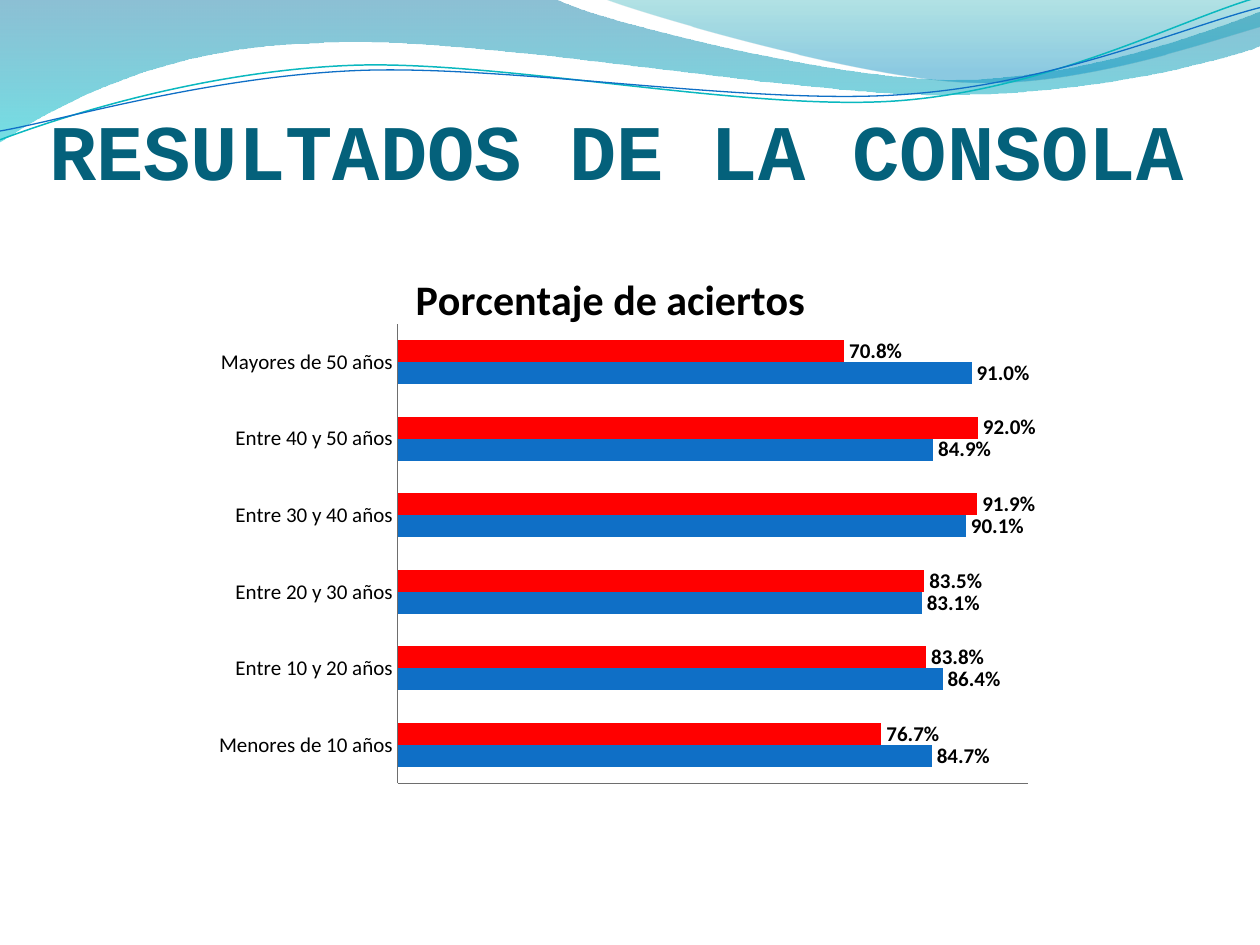
import math
import pptx
import pptx.chart.data
import pptx.dml.color
import pptx.enum.chart
import pptx.enum.text
import pptx.oxml
import pptx.oxml.ns
import pptx.util
from dataclasses import dataclass
from lxml import etree

Inches, Pt = pptx.util.Inches, pptx.util.Pt
qn = pptx.oxml.ns.qn


@dataclass(frozen=True)
class Theme:
    title: str = "04617B"
    text: str = "000000"
    axis: str = "6E6E6E"
    blue: str = "0F6FC6"
    red: str = "FF0000"
    teal: str = "0AB8BF"
    title_font: str = "Courier New"
    chart_font: str = "Calibri"
    title_size: int = 45
    chart_title_size: int = 24
    label_size: int = 12


THEME = Theme()
LINE_TILT = 357.3

# Each path is a start point, then line ends (x, y) or cubic curves (two controls and an end)
BACK_WAVE = [(0, 0), (4.4, -0.01), (4.76, 0.17, 6.64, 0.63, 7.58, 0.63),
             (8.53, 0.63, 9.58, 0.26, 10, 0.09), (10.01, 0.36),
             (9.83, 0.44, 8.7, 0.76, 7.46, 0.75), (6.22, 0.75, 3.82, 0.28, 2.57, 0.34),
             (1.29, 0.36, 0.46, 0.83, -0.01, 1.13), (0, 0)]
FRONT_WAVE = [(4.79, -0.01), (5.09, 0.11, 6.82, 0.62, 7.69, 0.65),
              (8.56, 0.69, 9.61, 0.32, 10, 0.21), (10, 0), (4.79, -0.01)]
TEAL_LINE = [(0, 1.11), (0.48, 0.93, 1.58, 0.57, 2.77, 0.52),
             (3.95, 0.47, 5.93, 0.89, 7.13, 0.8), (8.33, 0.71, 9.38, 0.15, 9.98, -0.02)]
BLUE_LINE = [(0, 1.04), (0.47, 0.96, 1.64, 0.61, 2.83, 0.56),
             (4.03, 0.51, 5.97, 0.84, 7.17, 0.75), (8.36, 0.67, 9.41, 0.21, 10, 0.06)]

# Gradient stops: position, colour, opacity in percent
BACK_STOPS = [(0, "0074A1", 45), (1, "00C6CF", 55)]
FRONT_STOPS = [(0, "00A1A9", 30), (0.8, "008BBF", 45)]

CATEGORIES = ["Menores de 10 años", "Entre 10 y 20 años", "Entre 20 y 30 años",
              "Entre 30 y 40 años", "Entre 40 y 50 años", "Mayores de 50 años"]
SERIES = [("Series 1", THEME.blue, [0.847, 0.864, 0.831, 0.901, 0.849, 0.91]),
          ("Series 2", THEME.red, [0.767, 0.838, 0.835, 0.919, 0.92, 0.708])]


def rgb(value):
    return pptx.dml.color.RGBColor.from_string(value)


def style_font(font, name, size, color, bold):
    font.name, font.size, font.bold = name, Pt(size), bold
    font.color.rgb = rgb(color)


def add_path(s, box, path, close, rotation=0):
    """Outline of lines and cubic curves in a box (left, top, width, height)."""
    left, top, width, height = box
    builder = s.shapes.build_freeform(Inches(left), Inches(top))
    builder.add_line_segments([(Inches(left + width), Inches(top + height))], close=False)
    sp = builder.convert_to_shape()
    sp.shadow.inherit = False
    sp.rotation = rotation

    # Points are given as seen on the slide, so the turn of the box is taken back
    cos, sin = math.cos(math.radians(-rotation)), math.sin(math.radians(-rotation))
    outline = next(sp.element.spPr.iter(qn("a:path")))
    for old in list(outline):
        outline.remove(old)
    for i, part in enumerate(path):
        tag = "a:moveTo" if i == 0 else "a:lnTo" if len(part) == 2 else "a:cubicBezTo"
        command = etree.SubElement(outline, qn(tag))
        for x, y in zip(part[::2], part[1::2]):
            dx, dy = x - left - width / 2, y - top - height / 2
            pt = etree.SubElement(command, qn("a:pt"))
            pt.set("x", str(Inches(width / 2 + dx * cos - dy * sin)))
            pt.set("y", str(Inches(height / 2 + dx * sin + dy * cos)))
    if close:
        etree.SubElement(outline, qn("a:close"))
    return sp


def add_wave(s, box, path, stops):
    sp = add_path(s, box, path, True)
    sp.line.fill.background()
    sp.fill.gradient()
    sp.fill.gradient_angle = 270  # top to bottom
    for stop, (position, color, _) in zip(sp.fill.gradient_stops, stops):
        stop.position = position
        stop.color.rgb = rgb(color)
    for clr, (_, _, opacity) in zip(sp.element.spPr.iter(qn("a:srgbClr")), stops):
        etree.SubElement(clr, qn("a:alpha")).set("val", str(opacity * 1000))


def add_curve(s, box, path, color, width):
    sp = add_path(s, box, path, False, LINE_TILT)
    sp.fill.background()
    sp.line.color.rgb = rgb(color)
    sp.line.width = Pt(width)


def add_title(s, text):
    sp = s.shapes.add_textbox(Inches(0.39), Inches(0.77), Inches(9.22), Inches(0.79))
    tf = sp.text_frame
    tf.word_wrap = True
    tf.vertical_anchor = pptx.enum.text.MSO_ANCHOR.BOTTOM
    tf.margin_left = tf.margin_right = tf.margin_bottom = 0
    tf.margin_top = Inches(0.05)
    r = tf.paragraphs[0].add_run()
    r.text = text
    style_font(r.font, THEME.title_font, THEME.title_size, THEME.title, True)


def set_plot_area(chart, x, y, w, h):
    """Fix the inner plot area, as fractions of the chart."""
    plot_area = chart._chartSpace.chart.plotArea
    for old in plot_area.findall(qn("c:layout")):
        plot_area.remove(old)
    layout = etree.Element(qn("c:layout"))
    manual = etree.SubElement(layout, qn("c:manualLayout"))
    values = [("layoutTarget", "inner"), ("xMode", "edge"), ("yMode", "edge"),
              ("x", x), ("y", y), ("w", w), ("h", h)]
    for tag, value in values:
        etree.SubElement(manual, qn("c:" + tag)).set("val", str(value))
    plot_area.insert(0, layout)


def style_axis(axis, labels):
    axis.has_major_gridlines = False
    axis.major_tick_mark = axis.minor_tick_mark = pptx.enum.chart.XL_TICK_MARK.NONE
    axis.tick_label_position = labels
    axis.format.line.color.rgb = rgb(THEME.axis)
    axis.format.line.width = Pt(0.75)


def add_bar_chart(s, title):
    enum = pptx.enum.chart
    data = pptx.chart.data.CategoryChartData(number_format="0.0%")
    data.categories = CATEGORIES
    for name, _, values in SERIES:
        data.add_series(name, values)
    chart = s.shapes.add_chart(enum.XL_CHART_TYPE.BAR_CLUSTERED, Inches(1.33), Inches(1.95),
                               Inches(7.03), Inches(4.53), data).chart
    style_font(chart.font, THEME.chart_font, THEME.label_size, THEME.text, False)
    chart.has_legend = False

    # Title and plot area
    r = chart.chart_title.text_frame.paragraphs[0].add_run()
    r.text = title
    style_font(r.font, THEME.chart_font, THEME.chart_title_size, THEME.text, True)
    set_plot_area(chart, 0.26, 0.137, 0.712, 0.805)

    # Axes
    style_axis(chart.category_axis, enum.XL_TICK_LABEL_POSITION.NEXT_TO_AXIS)
    style_axis(chart.value_axis, enum.XL_TICK_LABEL_POSITION.NONE)
    chart.value_axis.minimum_scale, chart.value_axis.maximum_scale = 0, 1

    # Bars and their values
    plot = chart.plots[0]
    plot.gap_width, plot.overlap, plot.vary_by_categories = 150, 0, False
    for series, (_, color, _) in zip(plot.series, SERIES):
        series.format.fill.solid()
        series.format.fill.fore_color.rgb = rgb(color)
        labels = series.data_labels
        labels.show_value = True
        labels.number_format, labels.number_format_is_linked = "0.0%", False
        labels.position = enum.XL_LABEL_POSITION.OUTSIDE_END
        style_font(labels.font, THEME.chart_font, THEME.label_size, THEME.text, True)


def main():
    prs = pptx.Presentation()
    prs.slide_width, prs.slide_height = Inches(10), Inches(7.5)
    s = prs.slides.add_slide(prs.slide_layouts[6])

    # Waves along the top
    add_wave(s, (-0.01, -0.01, 10.02, 1.14), BACK_WAVE, BACK_STOPS)
    add_wave(s, (4.79, -0.01, 5.21, 0.7), FRONT_WAVE, FRONT_STOPS)
    add_curve(s, (-0.02, 0.22, 10.02, 0.71), TEAL_LINE, THEME.teal, 0.85)
    add_curve(s, (-0.02, 0.3, 10.03, 0.58), BLUE_LINE, THEME.blue, 0.75)

    # Content
    add_title(s, "RESULTADOS DE LA CONSOLA")
    add_bar_chart(s, "Porcentaje de aciertos")
    prs.save("out.pptx")


if __name__ == "__main__":
    main()
